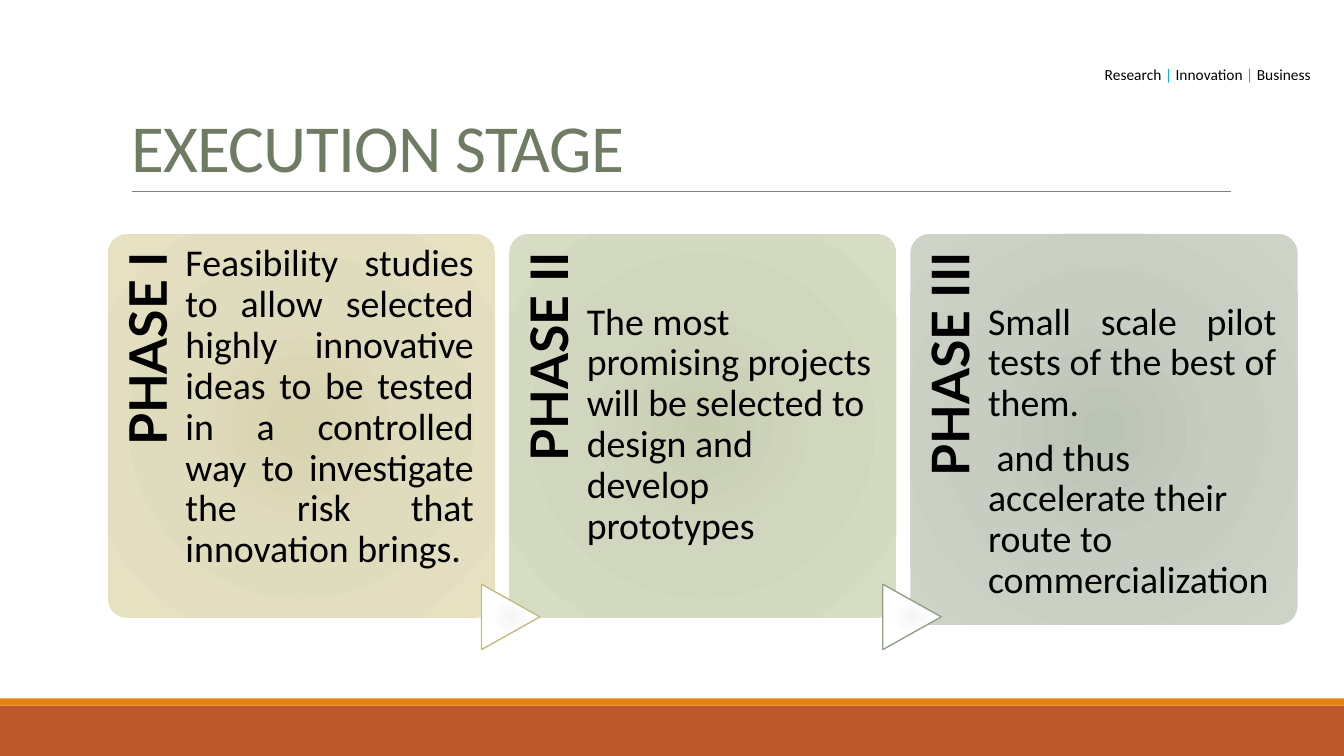
from lxml import etree
from pptx import Presentation
from pptx import util as u
from pptx.dml.color import RGBColor
from pptx.enum import shapes, text
from pptx.oxml import parse_xml
from pptx.oxml.ns import nsdecls, qn

PANEL_TOP, PANEL_WIDTH, PANEL_PITCH = 2.32, 3.84, 3.98
JUSTIFY, LEFT = text.PP_ALIGN.JUSTIFY, text.PP_ALIGN.LEFT
ARROW_COLORS = ["F6F6F6", "FEFEFE", "FFFFFF"]

# Each phase: name, panel height, text inset, gradient, arrow outline, paragraphs
PHASES = [
    ("PHASE I", 3.81, 0.1, ["D7D3AF", "DFDBBD", "E5E1C1"], None,
     [("Feasibility studies to allow selected highly innovative ideas to be "
       "tested in a controlled way to investigate the risk that innovation "
       "brings.", JUSTIFY)]),
    ("PHASE II", 3.81, 0.68, ["C7CDB1", "D1D6BF", "D7DCC4"], "C2BC80",
     [("The most promising projects will be selected to design and develop "
       "prototypes", LEFT)]),
    ("PHASE III", 3.88, 0.68, ["BBC3B5", "C7CDC1", "CDD4C7"], "94A088",
     [("Small scale pilot tests of the best of them.", JUSTIFY),
      (" and thus accelerate their route to commercialization", LEFT)]),
]


def color(value):
    return RGBColor.from_string(value)


def box(left, top, width, height):
    return [u.Inches(length) for length in (left, top, width, height)]


def set_frame(frame, insets, anchor=text.MSO_ANCHOR.TOP, wrap=True):
    frame.word_wrap = wrap
    frame.auto_size = text.MSO_AUTO_SIZE.NONE
    frame.vertical_anchor = anchor
    (frame.margin_left, frame.margin_top,
     frame.margin_right, frame.margin_bottom) = box(*insets)


def write(paragraph, content, size, font="Calibri", fill="000000", bold=False,
          align=LEFT, line_spacing=0.9, space_after=0):
    paragraph.alignment = align
    paragraph.line_spacing = line_spacing
    paragraph.space_before = u.Pt(0)
    paragraph.space_after = u.Pt(space_after)
    run = paragraph.add_run()
    run.text = content
    run.font.name = font
    run.font.size = u.Pt(size)
    run.font.bold = bold
    run.font.color.rgb = color(fill)
    return run


def add_shape(slide, kind, bounds, fill=None, line=None):
    shape = slide.shapes.add_shape(kind, *box(*bounds))
    shape.shadow.inherit = False
    if fill:
        shape.fill.solid()
        shape.fill.fore_color.rgb = color(fill)
    if line:
        shape.line.color.rgb = color(line)
        shape.line.width = u.Pt(1)
    else:
        shape.line.fill.background()
    return shape


def radial_fill(shape, colors):
    stops = "".join(
        f'<a:gs pos="{position}"><a:srgbClr val="{value}"/></a:gs>'
        for position, value in zip((0, 45000, 100000), colors))
    gradient = parse_xml(
        f'<a:gradFill {nsdecls("a")} rotWithShape="1"><a:gsLst>{stops}</a:gsLst>'
        '<a:path path="circle"><a:fillToRect l="100000" t="100000" '
        'r="100000" b="100000"/></a:path></a:gradFill>')
    shape.fill.solid()
    properties = shape.element.spPr
    properties.replace(properties.find(qn("a:solidFill")), gradient)


def add_frame_parts(slide):
    # Footer bands
    rectangle = shapes.MSO_SHAPE.RECTANGLE
    add_shape(slide, rectangle, (0, 7, 13.33, 0.5), fill="BD582C")
    add_shape(slide, rectangle, (0, 6.93, 13.33, 0.07), fill="E48312")

    # Rule under the title
    rule = slide.shapes.add_connector(
        shapes.MSO_CONNECTOR.STRAIGHT, *box(1.31, 1.9, 12.21, 1.9))
    rule.line.color.rgb = color("808080")
    rule.line.width = u.Pt(0.5)
    etree.SubElement(rule.element.spPr, qn("a:effectLst"))

    # Tagline
    tagline = slide.shapes.add_textbox(*box(7.07, 0.43, 6.03, 0.45))
    set_frame(tagline.text_frame, (0.1, 0.05, 0.1, 0.05),
              text.MSO_ANCHOR.BOTTOM, wrap=False)
    for part in ("Research ", "| ", "Innovation ", "|", " Business"):
        write(tagline.text_frame.paragraphs[0], part, 11,
              fill="00B0F0" if "|" in part else "000000",
              align=text.PP_ALIGN.RIGHT, line_spacing=1.0)


def add_title(slide, content):
    title = slide.shapes.title
    title.left, title.top, title.width, title.height = box(1.2, 0.31, 11, 1.59)
    set_frame(title.text_frame, (0.1, 0.05, 0.1, 0.05), text.MSO_ANCHOR.BOTTOM)
    run = write(title.text_frame.paragraphs[0], content, 48, fill="6F7B63",
                line_spacing=0.85)
    run.font._element.set("spc", "-50")


def add_phase(slide, left, name, height, inset, colors, arrow_line, paragraphs):
    # Panel
    panel = add_shape(slide, shapes.MSO_SHAPE.ROUNDED_RECTANGLE,
                      (left, PANEL_TOP, PANEL_WIDTH, height))
    panel.adjustments[0] = 0.05
    radial_fill(panel, colors)

    # Phase name, turned to read upwards
    length, depth = height * 0.82, 0.77
    label = slide.shapes.add_textbox(
        *box(left + (depth - length) / 2, PANEL_TOP + (length - depth) / 2,
             length, depth))
    label.rotation = 270
    set_frame(label.text_frame, (0, 0.14, 0.18, 0))
    write(label.text_frame.paragraphs[0], name, 37, font="Lato", bold=True,
          align=text.PP_ALIGN.RIGHT)

    # Arrow from the previous phase
    if arrow_line:
        arrow = add_shape(slide, shapes.MSO_SHAPE.FLOWCHART_EXTRACT,
                          (left - 0.31, 5.83, 0.65, 0.58), line=arrow_line)
        arrow.rotation = 90
        radial_fill(arrow, ARROW_COLORS)

    # Description
    body = slide.shapes.add_textbox(*box(left + depth, PANEL_TOP, 2.86, height))
    frame = body.text_frame
    set_frame(frame, (0, inset, 0, 0))
    for index, (content, align) in enumerate(paragraphs):
        paragraph = frame.add_paragraph() if index else frame.paragraphs[0]
        write(paragraph, content, 27, align=align, space_after=9.5)


def main():
    presentation = Presentation()
    presentation.slide_width = u.Inches(13.33)
    presentation.slide_height = u.Inches(7.5)
    slide = presentation.slides.add_slide(presentation.slide_layouts[5])
    add_frame_parts(slide)
    add_title(slide, "EXECUTION STAGE")
    for index, phase in enumerate(PHASES):
        add_phase(slide, 1.07 + index * PANEL_PITCH, *phase)
    presentation.save("out.pptx")


if __name__ == "__main__":
    main()
